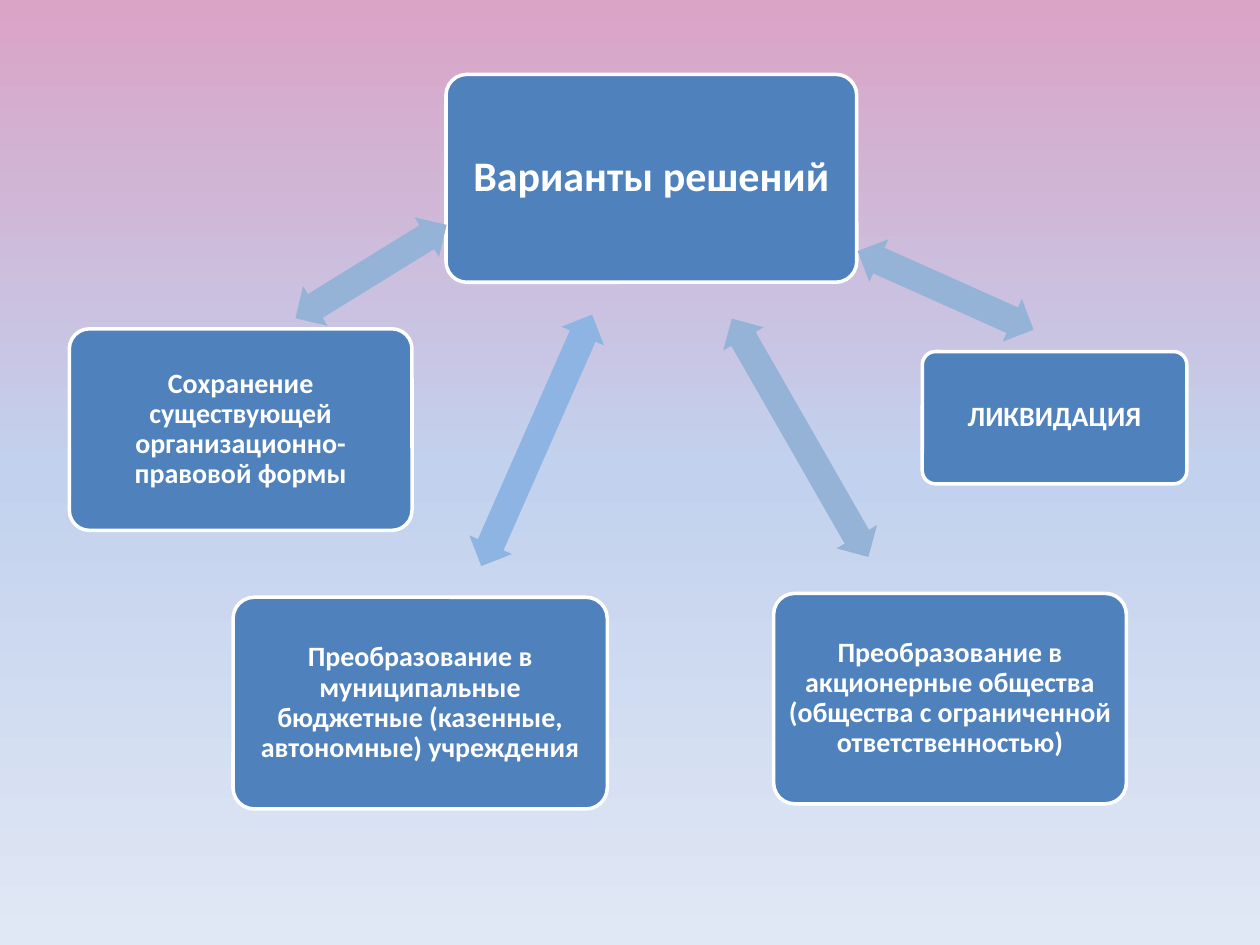
from copy import deepcopy
from dataclasses import dataclass

from pptx import Presentation
from pptx.dml.color import RGBColor
from pptx.enum import shapes, text
from pptx.util import Inches, Pt


@dataclass(frozen=True)
class Theme:
    font: str = "Calibri"
    box: str = "4F81BD"
    light: str = "FFFFFF"
    arrow: str = "95B3D7"
    arrow_bright: str = "8EB4E3"
    background: tuple = ((0, "DAA4C7"), (0.5, "C2D1ED"), (1, "E1E8F5"))
    title_size: int = 24
    option_size: int = 16


THEME = Theme()
TITLE = ("Варианты решений", (3.54, 0.59, 3.26, 1.65))
OPTIONS = [
    ("Сохранение существующей организационно-правовой формы", (0.55, 2.61, 2.72, 1.6)),
    ("Преобразование в муниципальные бюджетные (казенные, автономные) учреждения",
     (1.85, 4.74, 2.97, 1.68)),
    ("Преобразование в акционерные общества (общества с ограниченной ответственностью)",
     (6.14, 4.71, 2.8, 1.67)),
    ("ЛИКВИДАЦИЯ", (7.32, 2.79, 2.1, 1.05)),
]
# Box before turning, clockwise angle, colour
ARROWS = [
    ((2.24, 1.97, 1.41, 0.37), -31.7, THEME.arrow),
    ((3.17, 3.31, 2.18, 0.37), -66.2, THEME.arrow_bright),
    ((5.26, 3.29, 2.18, 0.37), 60.2, THEME.arrow),
    ((6.74, 2.12, 1.53, 0.37), 24.1, THEME.arrow),
]


def rgb(value):
    return RGBColor.from_string(value)


def set_all(target, values):
    for name, value in values.items():
        setattr(target, name, value)


def paint_background(s):
    fill = s.background.fill
    fill.gradient()
    fill.gradient_angle = 270
    last = fill.gradient_stops[1]._gs
    last.addprevious(deepcopy(last))
    for stop, (position, colour) in zip(fill.gradient_stops, THEME.background):
        stop.position = position
        stop.color.rgb = rgb(colour)


def add_filled(s, kind, box, colour, adjustments):
    sp = s.shapes.add_shape(kind, *map(Inches, box))
    sp.shadow.inherit = False
    sp.fill.solid()
    sp.fill.fore_color.rgb = rgb(colour)
    for i, value in enumerate(adjustments):
        sp.adjustments[i] = value
    return sp


def add_card(s, box):
    sp = add_filled(s, shapes.MSO_SHAPE.ROUNDED_RECTANGLE, box, THEME.box, [0.1])
    sp.line.color.rgb = rgb(THEME.light)
    sp.line.width = Pt(2)
    return sp


def write(sp, words, size, inset):
    tf = sp.text_frame
    tf.text = words
    margins = dict.fromkeys(
        ("margin_left", "margin_top", "margin_right", "margin_bottom"), Inches(inset))
    set_all(tf, {"word_wrap": True, "auto_size": text.MSO_AUTO_SIZE.NONE,
                 "vertical_anchor": text.MSO_ANCHOR.MIDDLE, **margins})
    p = tf.paragraphs[0]
    set_all(p, {"alignment": text.PP_ALIGN.CENTER, "line_spacing": 0.9})
    font = p.runs[0].font
    set_all(font, {"name": THEME.font, "size": Pt(size), "bold": True})
    font.color.rgb = rgb(THEME.light)


def add_title(s, words, box):
    """Lay the title placeholder over its card."""
    card = add_card(s, box)
    title = s.shapes.title
    set_all(title, dict(zip(("left", "top", "width", "height"), map(Inches, box))))
    write(title, words, THEME.title_size, 0.1)
    card._element.addnext(title._element)


def add_option(s, words, box):
    write(add_card(s, box), words, THEME.option_size, 0.07)


def add_arrow(s, box, angle, colour):
    sp = add_filled(s, shapes.MSO_SHAPE.LEFT_RIGHT_ARROW, box, colour, [0.6, 0.5])
    sp.line.fill.background()
    sp.rotation = angle


def main():
    prs = Presentation()
    set_all(prs, {"slide_width": Inches(10), "slide_height": Inches(7.5)})
    s = prs.slides.add_slide(prs.slide_layouts.get_by_name("Title Only"))
    paint_background(s)
    add_title(s, *TITLE)
    for option in OPTIONS:
        add_option(s, *option)
    for arrow in ARROWS:
        add_arrow(s, *arrow)
    prs.save("out.pptx")


if __name__ == "__main__":
    main()
